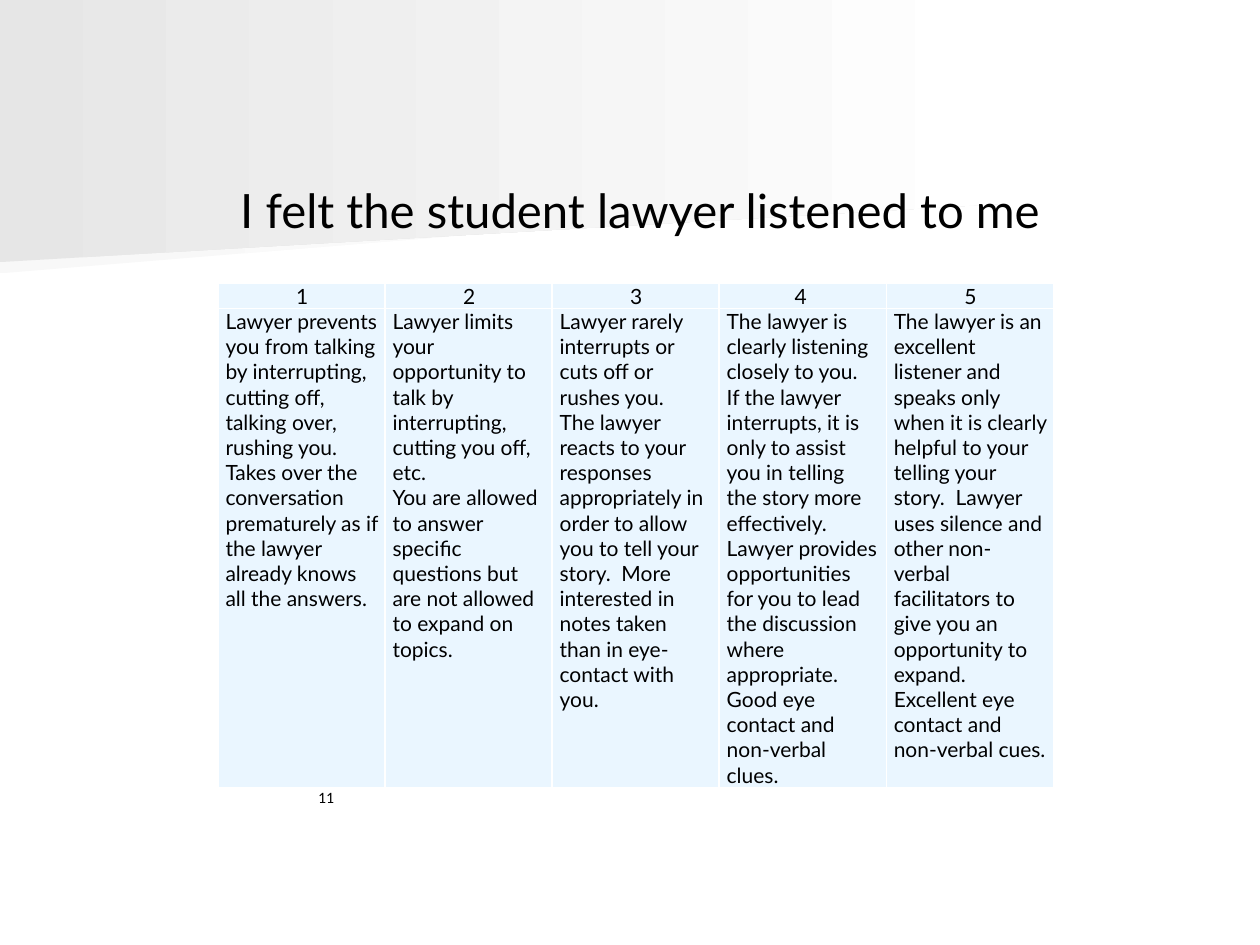
"""Build a slide with a five-level rating scale for how well a lawyer listened."""
from lxml import etree
from pptx import Presentation
from pptx import util as u
from pptx.dml.color import RGBColor
from pptx.enum import text
from pptx.oxml.ns import qn

COLORS = {
    "text": "000000",
    "cell": "EAF6FF",
    "white": "FFFFFF",
    "band": "E6E6E6",
    "band_edge": "F8F8F8",
}
ALIGN = text.PP_ALIGN
ANCHOR = text.MSO_ANCHOR

RATINGS = {
    "1": [
        "Lawyer prevents you from talking by interrupting, cutting off, talking over, rushing you.",
        "Takes over the conversation prematurely as if the lawyer already knows all the answers.",
    ],
    "2": [
        "Lawyer limits your opportunity to talk by interrupting, cutting you off, etc.",
        "You are allowed to answer specific questions but are not allowed to expand on topics.",
    ],
    "3": [
        "Lawyer rarely interrupts or cuts off or rushes you.",
        "The lawyer reacts to your responses appropriately in order to allow you to tell your "
        "story.  More interested in notes taken than in eye-contact with you.",
    ],
    "4 ": [
        "The lawyer is clearly listening closely to you.",
        "If the lawyer interrupts, it is only to assist you in telling the story more effectively.",
        "Lawyer provides opportunities for you to lead the discussion where appropriate.",
        "Good eye contact and non-verbal clues.",
    ],
    "5": [
        "The lawyer is an excellent listener and speaks only when it is clearly helpful to your "
        "telling your story.  Lawyer uses silence and other non-verbal facilitators to give you "
        "an opportunity to expand.",
        "Excellent eye contact and non-verbal cues.",
    ],
}


def color(name):
    return RGBColor.from_string(COLORS[name])


def write(frame, paragraphs, size=12, font="Lato", align=ALIGN.LEFT):
    frame.word_wrap = True
    for index, words in enumerate(paragraphs):
        paragraph = frame.add_paragraph() if index else frame.paragraphs[0]
        paragraph.alignment = align
        run = paragraph.add_run()
        run.text = words
        run.font.size = u.Pt(size)
        run.font.name = font
        run.font.color.rgb = color("text")


def add_text(slide, words, box, anchor, **style):
    shape = slide.shapes.add_textbox(*map(u.Inches, box))
    shape.text_frame.vertical_anchor = anchor
    write(shape.text_frame, [words], **style)


def add_band(slide, points, start):
    corners = [(u.Inches(x), u.Inches(y)) for x, y in points]
    builder = slide.shapes.build_freeform(*corners[0])
    builder.add_line_segments(corners[1:], close=True)
    shape = builder.convert_to_shape()
    shape.shadow.inherit = False
    shape.line.fill.background()
    shape.fill.gradient()
    shape.fill.gradient_angle = 0
    for stop, name in zip(shape.fill.gradient_stops, (start, "white")):
        stop.color.rgb = color(name)


def set_borders(cell, name, width):
    properties = cell._tc.get_or_add_tcPr()
    for index, side in enumerate(("a:lnL", "a:lnR", "a:lnT", "a:lnB")):
        line = etree.Element(qn(side), w=str(u.Pt(width)))
        fill = etree.SubElement(line, qn("a:solidFill"))
        etree.SubElement(fill, qn("a:srgbClr"), val=COLORS[name])
        properties.insert(index, line)


def fill_cell(cell, paragraphs, align):
    cell.margin_left, cell.margin_right = u.Inches(0.06), u.Inches(0.05)
    cell.margin_top = cell.margin_bottom = 0
    cell.fill.solid()
    cell.fill.fore_color.rgb = color("cell")
    write(cell.text_frame, paragraphs, align=align)
    set_borders(cell, "white", 1)


def add_ratings(slide, box, row_heights):
    table = slide.shapes.add_table(2, len(RATINGS), *map(u.Inches, box)).table
    for row, height in zip(table.rows, row_heights):
        row.height = u.Inches(height)
    for column, (score, description) in enumerate(RATINGS.items()):
        fill_cell(table.cell(0, column), [score], ALIGN.CENTER)
        fill_cell(table.cell(1, column), description, ALIGN.LEFT)


def main():
    presentation = Presentation()
    presentation.slide_width, presentation.slide_height = u.Inches(10), u.Inches(7.5)
    slide = presentation.slides.add_slide(presentation.slide_layouts[6])
    add_band(slide, [(7.78, 1.53), (0, 2.17), (0, 1.01), (7.79, 1.01)], "band_edge")
    add_band(slide, [(7.92, 1.62), (0, 2.08), (0, 0), (7.92, 0)], "band")
    add_text(slide, "I felt the student lawyer listened to me", (1.62, 1.19, 6.73, 0.94),
             ANCHOR.MIDDLE, size=27, align=ALIGN.RIGHT)
    add_ratings(slide, (1.73, 2.25, 6.63, 4), (0.2, 3.8))
    add_text(slide, "11", (1.63, 6.19, 1.12, 0.26), ANCHOR.BOTTOM,
             size=9, font="Calibri", align=ALIGN.RIGHT)
    presentation.save("out.pptx")


if __name__ == "__main__":
    main()
